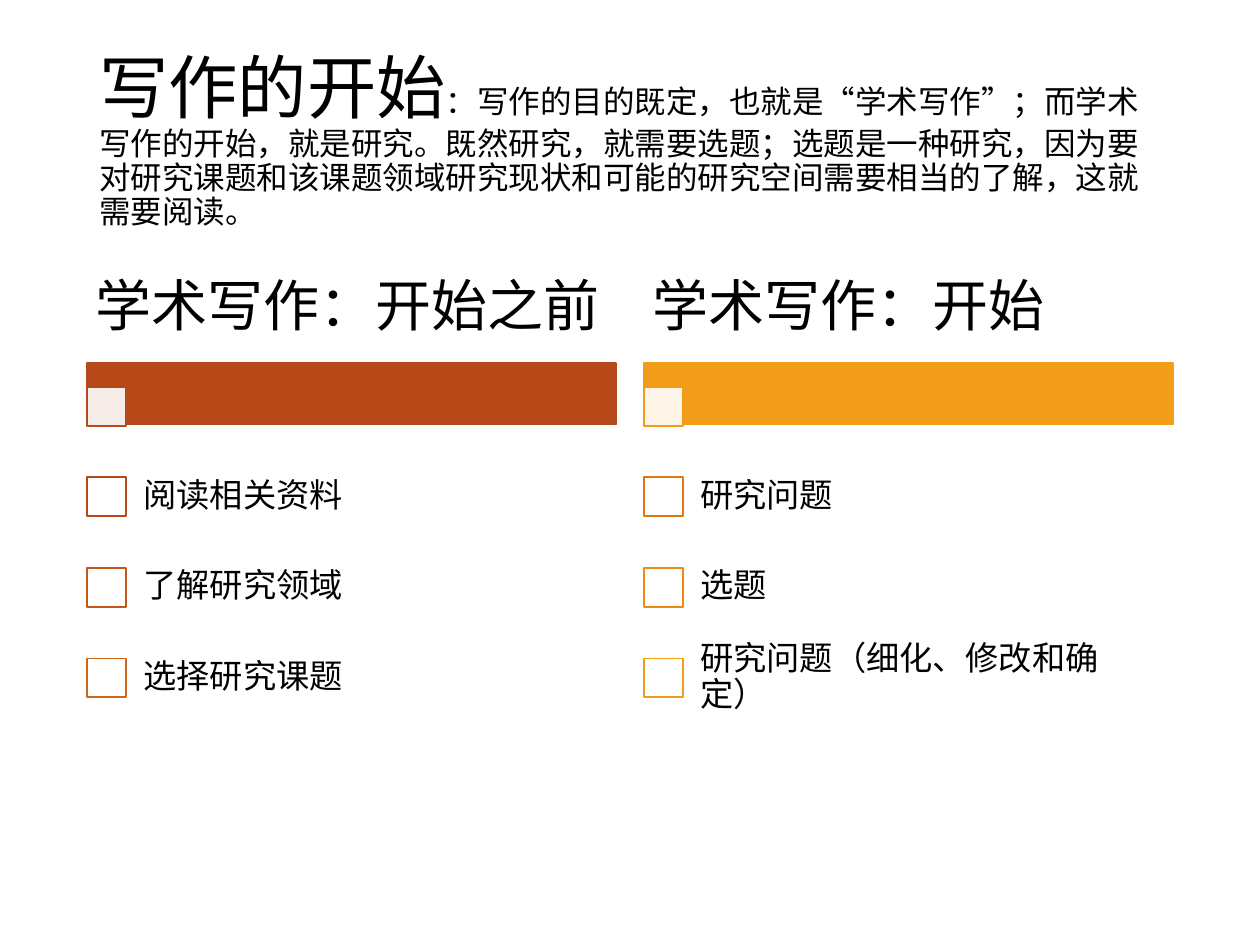
from lxml.etree import SubElement
from pptx import Presentation
from pptx.dml.color import RGBColor
from pptx.enum.lang import MSO_LANGUAGE_ID as Language
from pptx.enum.shapes import MSO_SHAPE as Shape
from pptx.enum.text import MSO_ANCHOR as Anchor
from pptx.oxml.ns import qn
from pptx.util import Inches, Pt

COLORS = {
    "text": "000000",
    "white": "FFFFFF",
    "rust": "B74919",
    "brick": "C45718",
    "copper": "D16616",
    "pumpkin": "DF7714",
    "amber": "ED8A12",
    "orange": "F19D19",
}
FONT = "Times New Roman"
COLUMN_WIDTH = 4.2
BOX_SIZE = 0.31
ROW_TOP = 3.58
ROW_HEIGHT = 0.72
TEXT_INDENT = 0.3

TITLE = [
    ("写作的开始", 39.6),
    (
        "：写作的目的既定，也就是“学术写作”；而学术写作的开始，就是研究。"
        "既然研究，就需要选题；选题是一种研究，因为要对研究课题和该课题领域"
        "研究现状和可能的研究空间需要相当的了解，这就需要阅读。",
        18,
    ),
]
COLUMNS = [
    (0.69, "学术写作：开始之前", "rust", [
        ("阅读相关资料", "rust"),
        ("了解研究领域", "brick"),
        ("选择研究课题", "copper"),
    ]),
    (5.11, "学术写作：开始", "orange", [
        ("研究问题", "pumpkin"),
        ("选题", "amber"),
        ("研究问题（细化、修改和确定）", "orange"),
    ]),
]


class PageBuilder:
    def __init__(self, page):
        self.page = page

    def color(self, name):
        return RGBColor.from_string(COLORS[name])

    def rect(self, left, top, width, height, fill, line, opacity=100):
        box = self.page.shapes.add_shape(
            Shape.RECTANGLE, Inches(left), Inches(top), Inches(width), Inches(height)
        )
        box.shadow.inherit = False
        box.fill.solid()
        box.fill.fore_color.rgb = self.color(fill)
        box.line.color.rgb = self.color(line)
        box.line.width = Pt(1)
        if opacity < 100:
            tint = box.fill._xPr.find(qn("a:solidFill"))[0]
            SubElement(tint, qn("a:alpha"), val=str(opacity * 1000))

    def text(self, left, top, width, height, spans, inset_x, inset_y):
        box = self.page.shapes.add_textbox(
            Inches(left), Inches(top), Inches(width), Inches(height)
        )
        frame = box.text_frame
        frame_format = {
            "word_wrap": True,
            "vertical_anchor": Anchor.MIDDLE,
            "margin_left": Inches(inset_x),
            "margin_right": Inches(inset_x),
            "margin_top": Inches(inset_y),
            "margin_bottom": Inches(inset_y),
        }
        for name, value in frame_format.items():
            setattr(frame, name, value)
        para = frame.paragraphs[0]
        para.line_spacing = 0.9
        for words, size in spans:
            span = para.add_run()
            span.text = words
            span.font.color.rgb = self.color("text")
            font_format = {
                "name": FONT,
                "size": Pt(size),
                "language_id": Language.SIMPLIFIED_CHINESE,
            }
            for name, value in font_format.items():
                setattr(span.font, name, value)

    def column(self, left, heading, accent, items):
        self.rect(left, 2.88, COLUMN_WIDTH, 0.49, accent, accent)
        self.rect(left, 3.07, BOX_SIZE, BOX_SIZE, "white", accent, opacity=90)
        self.text(left, 2, COLUMN_WIDTH, 0.89, [(heading, 32)], 0.07, 0.04)
        for row, (words, outline) in enumerate(items):
            top = ROW_TOP + row * ROW_HEIGHT
            box_top = top + (ROW_HEIGHT - BOX_SIZE) / 2
            self.rect(left, box_top, BOX_SIZE, BOX_SIZE, "white", outline)
            self.text(
                left + TEXT_INDENT, top, COLUMN_WIDTH - TEXT_INDENT, ROW_HEIGHT,
                [(words, 19)], 0.15, 0.15,
            )


def main():
    deck = Presentation()
    deck.slide_width = Inches(10)
    deck.slide_height = Inches(7.5)
    builder = PageBuilder(deck.slides.add_slide(deck.slide_layouts[6]))
    builder.text(0.69, 0.4, 8.62, 1.45, TITLE, 0.1, 0.05)
    for column in COLUMNS:
        builder.column(*column)
    deck.save("out.pptx")


if __name__ == "__main__":
    main()
